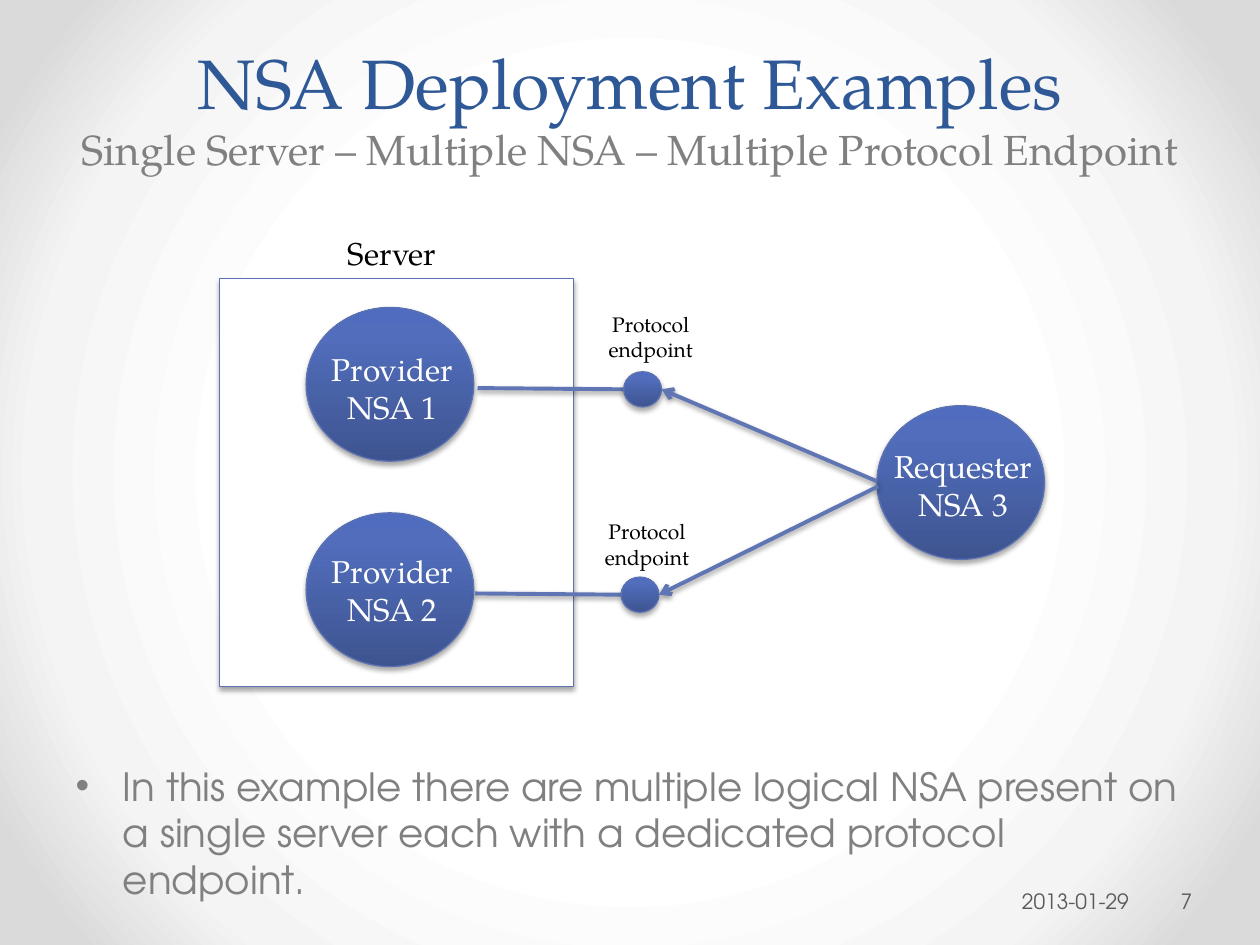
from pptx import Presentation
from pptx.dml.color import RGBColor
from pptx.enum.shapes import MSO_CONNECTOR, MSO_SHAPE
from pptx.enum.text import MSO_ANCHOR, MSO_AUTO_SIZE, PP_ALIGN
from pptx.oxml import parse_xml
from pptx.oxml.ns import nsdecls, qn
from pptx.util import Emu, Pt

RECT, OVAL = MSO_SHAPE.RECTANGLE, MSO_SHAPE.OVAL
STRAIGHT = MSO_CONNECTOR.STRAIGHT
TOP, MIDDLE, BOTTOM = MSO_ANCHOR.TOP, MSO_ANCHOR.MIDDLE, MSO_ANCHOR.BOTTOM
LEFT, CENTER, RIGHT = PP_ALIGN.LEFT, PP_ALIGN.CENTER, PP_ALIGN.RIGHT
NO_FIT, GROW = MSO_AUTO_SIZE.NONE, MSO_AUTO_SIZE.SHAPE_TO_FIT_TEXT

PX_PER_INCH = 100
SERIF, SANS = "TeX Gyre Pagella", "TeX Gyre Adventor"
BLUE, GRAY, DARK_GRAY = "2F5897", "808080", "595959"
OUTLINE, LINK = "5C72B2", "6076B4"
BALL = [(0, "3E5490"), (80, "516DBB"), (100, "4F6CBE")]
GLOW = [(50, "FFFFFF"), (76, "F4F4F4"), (92, "DADADA")]
UPWARD = '<a:lin ang="16200000" scaled="0"/>'
RADIAL = '<a:path path="circle"><a:fillToRect l="50000" t="50000" r="50000" b="50000"/></a:path>'


def px(n):
    return Emu(n * 914400 // PX_PER_INCH)


def rgb(color):
    return RGBColor.from_string(color)


def set_font(font, size, name, color):
    font.size, font.name = Pt(size), name
    font.color.rgb = rgb(color)


def set_gradient(parent, stops, direction):
    gs = "".join(f'<a:gs pos="{pos * 1000}"><a:srgbClr val="{c}"/></a:gs>' for pos, c in stops)
    grad = parse_xml(f'<a:gradFill {nsdecls("a")} rotWithShape="1">'
                     f'<a:gsLst>{gs}</a:gsLst>{direction}</a:gradFill>')
    parent.replace(parent.find(qn("a:solidFill")), grad)


def add_shadow(sp, alpha, dist):
    sp.element.spPr.append(parse_xml(
        f'<a:effectLst {nsdecls("a")}><a:outerShdw blurRad="{Pt(3.1)}" dist="{Pt(dist)}" '
        f'dir="5400000" rotWithShape="0"><a:srgbClr val="000000">'
        f'<a:alpha val="{alpha * 1000}"/></a:srgbClr></a:outerShdw></a:effectLst>'))


def place(sp, box):
    sp.left, sp.top, sp.width, sp.height = map(px, box)


def add_figure(slide, kind, box, stops=None):
    sp = slide.shapes.add_shape(kind, *map(px, box))
    sp.fill.solid()
    sp.fill.fore_color.rgb = rgb("FFFFFF")
    if stops:
        set_gradient(sp.element.spPr, stops, UPWARD)
    sp.line.color.rgb = rgb(OUTLINE)
    sp.line.width = Pt(0.75)
    add_shadow(sp, 35, 1.8)


def add_text(slide, box, text, size, name, color, align=CENTER, wrap=True):
    tf = slide.shapes.add_textbox(*map(px, box)).text_frame
    tf.word_wrap = wrap
    tf.auto_size = GROW
    p = tf.paragraphs[0]
    p.text, p.alignment = text, align
    set_font(p.font, size, name, color)
    return tf


def add_link(slide, start, end, arrow=False):
    cx = slide.shapes.add_connector(STRAIGHT, *map(px, start + end))
    cx.line.color.rgb = rgb(LINK)
    cx.line.width = Pt(2.25)
    if arrow:
        cx.element.spPr.find(qn("a:ln")).append(
            parse_xml(f'<a:tailEnd {nsdecls("a")} type="arrow"/>'))
    add_shadow(cx, 38, 1.6)


def add_background(slide):
    slide.background.fill.solid()
    set_gradient(slide.element.find(".//" + qn("p:bgPr")), GLOW, RADIAL)


def add_header(slide, box):
    sp = slide.shapes.title
    place(sp, box)
    tf = sp.text_frame
    tf.auto_size, tf.vertical_anchor = NO_FIT, BOTTOM
    p = tf.paragraphs[0]
    p.alignment = CENTER
    r = p.add_run()
    r.text = "NSA Deployment Examples"
    set_font(r.font, 40, SERIF, BLUE)
    p.add_line_break()
    r = p.add_run()
    r.text = "Single Server – Multiple NSA – Multiple Protocol Endpoint"
    set_font(r.font, 24, SERIF, GRAY)


def add_note(slide, box):
    sp = slide.placeholders[1]
    place(sp, box)
    tf = sp.text_frame
    tf.auto_size, tf.vertical_anchor = NO_FIT, TOP
    p = tf.paragraphs[0]
    p.text = ("In this example there are multiple logical NSA present on "
              "a single server each with a dedicated protocol endpoint.")
    set_font(p.font, 22.2, SANS, GRAY)


def add_footer(slide, box):
    x, y, w, h = box
    number_w = 61
    fields = [
        ((x, y, 228, h), "2013-01-29", RIGHT, 10),
        ((x + w - number_w, y, number_w, h), "7", LEFT, 3),
    ]
    for field, text, align, inset in fields:
        tf = add_text(slide, field, text, 12, SANS, DARK_GRAY, align)
        tf.auto_size, tf.vertical_anchor = NO_FIT, MIDDLE
        tf.margin_left, tf.margin_right = px(inset), px(5)


def add_agent(slide, box, text, text_at):
    add_figure(slide, OVAL, box, BALL)
    add_text(slide, text_at + (135, 71), text, 18, SERIF, "FFFFFF")


def add_diagram(slide, box):
    x, y, w, h = box
    agent_w, agent_h = 133, 122
    dot_w, dot_h = 30, 28
    server_w, server_top = 281, 40
    agent_x = x + 69
    requester_x, requester_y = x + w - agent_w, y + 141

    add_figure(slide, RECT, (x, y + server_top, server_w, h - server_top))
    add_text(slide, (x + 92, y, 91, 40), "Server", 18, SERIF, "000000", LEFT, False)
    add_agent(slide, (requester_x, requester_y, agent_w, agent_h),
              "Requester NSA 3", (requester_x + 1, requester_y + 28))

    rows = [
        ("Provider NSA 1", 63, 29, 321, 205, 281, 61, (0, 60)),
        ("Provider NSA 2", 226, 26, 319, 203, 278, 226, (1, 64)),
    ]
    for name, top, text_dy, dot_dx, link_dx, label_dx, label_dy, (port_dx, port_dy) in rows:
        agent_y = y + top
        dot_x, dot_y = x + dot_dx, agent_y + (agent_h - dot_h) // 2 + 4
        mid_y = dot_y + dot_h // 2
        add_agent(slide, (agent_x, agent_y, agent_w, agent_h),
                  name, (agent_x + 1, agent_y + text_dy))
        add_link(slide, (x + link_dx, mid_y - 1), (dot_x, mid_y))
        add_figure(slide, OVAL, (dot_x, dot_y, dot_w, dot_h), BALL)
        add_text(slide, (x + label_dx, y + label_dy, 123, 50),
                 "Protocol endpoint", 12, SERIF, "000000")
        add_link(slide, (requester_x + port_dx, requester_y + port_dy),
                 (dot_x + dot_w, mid_y), True)


def main():
    prs = Presentation()
    prs.slide_width, prs.slide_height = px(1000), px(750)
    slide = prs.slides.add_slide(prs.slide_layouts[1])
    add_background(slide)
    add_header(slide, (50, 0, 900, 143))
    add_note(slide, (50, 600, 900, 106))
    add_footer(slide, (673, 695, 322, 40))
    add_diagram(slide, (174, 181, 655, 364))
    prs.save("out.pptx")


if __name__ == "__main__":
    main()
